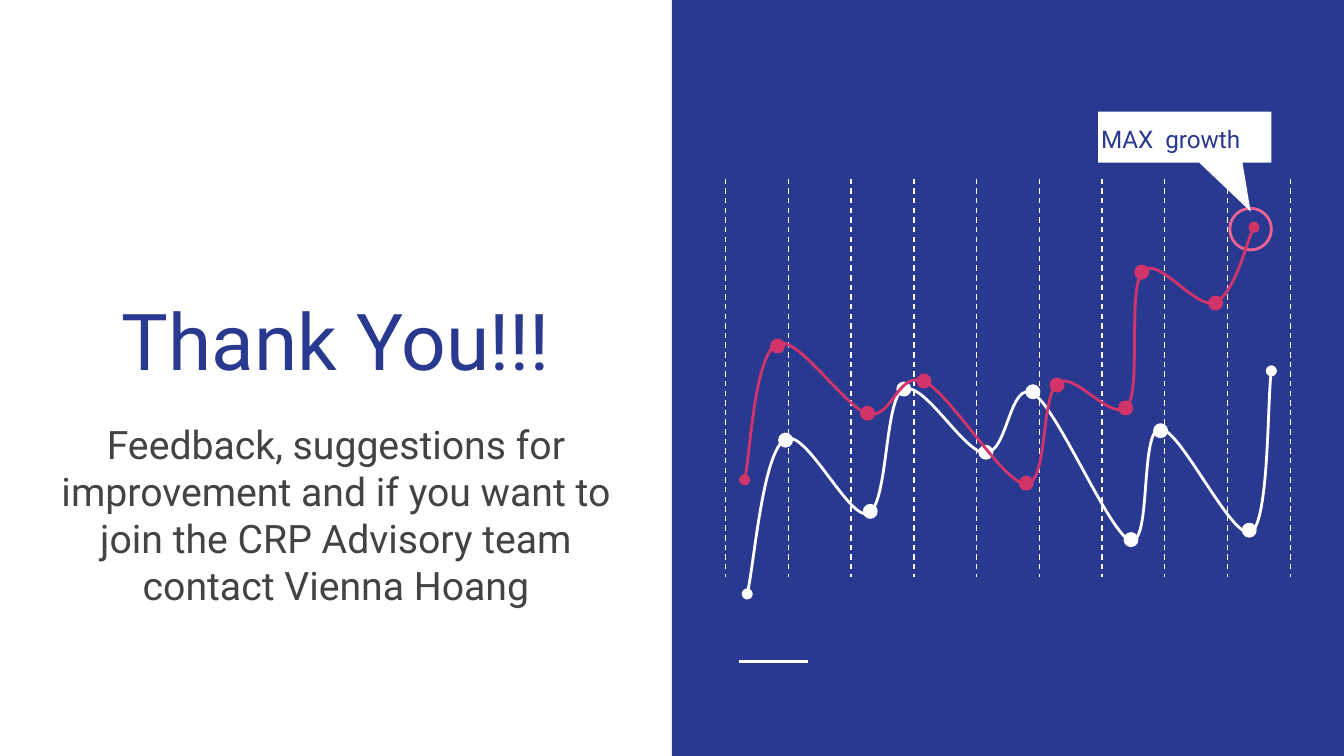
"""Build a closing slide with a thank-you message and a two-line growth graphic."""
from lxml import etree
from pptx import Presentation
from pptx.dml.color import RGBColor
from pptx.enum.dml import MSO_LINE
from pptx.enum.shapes import MSO_CONNECTOR, MSO_SHAPE
from pptx.enum.text import MSO_ANCHOR, PP_ALIGN
from pptx.oxml.ns import qn
from pptx.util import Emu, Pt

PX = 9144
WIDTH = 1000
HEIGHT = WIDTH * 9 / 16
STRAIGHT = MSO_CONNECTOR.STRAIGHT
DASH = MSO_LINE.DASH
RECTANGLE, OVAL = MSO_SHAPE.RECTANGLE, MSO_SHAPE.OVAL
CALLOUT = MSO_SHAPE.ROUNDED_RECTANGULAR_CALLOUT
TOP, MIDDLE, BOTTOM = MSO_ANCHOR.TOP, MSO_ANCHOR.MIDDLE, MSO_ANCHOR.BOTTOM
CENTER = PP_ALIGN.CENTER

FONT = "Roboto"
COLORS = {"white": "FFFFFF", "blue": "2A3990", "grey": "434343",
          "pink": "F06292", "red": "D23369"}

TITLE = ("Thank You!!!", (29, 126, 442, 171), BOTTOM, 42, "blue", 1)
MESSAGE = ("Feedback, suggestions for improvement and if you want to join "
           "the CRP Advisory team contact Vienna Hoang",
           (29, 303, 442, 185), TOP, 21, "grey", 1)
GROWTH_LABEL = ("MAX  growth", (796, 86, 150, 31), MIDDLE, 13, "blue", 1.15)

GRID = {"left": 540, "right": 960, "top": 133, "bottom": 429, "count": 10}
DOT_SIZE = 9

WHITE_START = (556, 442)
WHITE_CURVES = [
    [(561, 422), (568, 337), (584, 327)],
    [(599, 317), (632, 388), (646, 382)],
    [(661, 376), (658, 297), (672, 290)],
    [(687, 282), (717, 337), (733, 337)],
    [(750, 338), (751, 282), (769, 293)],
    [(787, 304), (826, 398), (841, 402)],
    [(857, 407), (848, 321), (863, 319)],
    [(878, 318), (917, 403), (931, 396)],
    [(944, 388), (943, 296), (946, 276)],
]
WHITE_DOTS = [(580, 323), (643, 376), (668, 285), (729, 332),
              (764, 287), (837, 397), (859, 316), (925, 390)]
RED_START = (554, 357)
RED_CURVES = [
    [(558, 340), (562, 264), (578, 256)],
    [(593, 248), (628, 303), (646, 308)],
    [(664, 312), (668, 275), (688, 284)],
    [(707, 293), (747, 360), (763, 360)],
    [(780, 361), (774, 295), (787, 285)],
    [(799, 275), (828, 316), (839, 302)],
    [(849, 289), (839, 215), (850, 202)],
    [(861, 189), (890, 231), (904, 225)],
    [(918, 219), (928, 178), (933, 169)],
]
RED_DOTS = [(574, 253), (641, 303), (683, 279), (759, 355),
            (782, 282), (833, 299), (845, 198), (900, 221)]


def emu(*lengths):
    return [Emu(round(length * PX)) for length in lengths]


def color(name):
    return RGBColor.from_string(COLORS[name])


def style(shape, fill=None, line=None):
    shape.shadow.inherit = False
    if fill:
        shape.fill.solid()
        shape.fill.fore_color.rgb = color(fill)
    else:
        shape.fill.background()
    if line:
        shape.line.color.rgb = color(line)
        shape.line.width = Pt(1.5)
    else:
        shape.line.fill.background()


def add_figure(slide, kind, box, fill=None, line=None):
    shape = slide.shapes.add_shape(kind, *emu(*box))
    style(shape, fill, line)
    return shape


def add_line(slide, start, end, width, dash=None):
    connector = slide.shapes.add_connector(STRAIGHT, *emu(*start, *end))
    connector.line.color.rgb = color("white")
    connector.line.width = Pt(width)
    if dash:
        connector.line.dash_style = dash
    etree.SubElement(connector._element.spPr, qn("a:effectLst"))


def add_text(slide, text, box, anchor, size, color_name, spacing):
    frame = slide.shapes.add_textbox(*emu(*box)).text_frame
    frame.word_wrap = True
    frame.vertical_anchor = anchor
    frame.margin_left = frame.margin_right = Emu(10 * PX)
    frame.margin_top = frame.margin_bottom = Emu(10 * PX)
    paragraph = frame.paragraphs[0]
    paragraph.text = text
    paragraph.alignment = CENTER
    paragraph.line_spacing = spacing
    paragraph.font.name = FONT
    paragraph.font.size = Pt(size)
    paragraph.font.color.rgb = color(color_name)


def add_curve(slide, start, curves, dots, color_name):
    builder = slide.shapes.build_freeform(*start, scale=PX)
    builder.add_line_segments([point for curve in curves for point in curve], close=False)
    shape = builder.convert_to_shape()
    style(shape, line=color_name)

    outline = next(shape._element.iter(qn("a:path")))
    segments = outline.findall(qn("a:lnTo"))
    for first in range(0, len(segments), 3):
        bezier = etree.SubElement(outline, qn("a:cubicBezTo"))
        for segment in segments[first:first + 3]:
            bezier.append(segment[0])
            outline.remove(segment)
    for tag in ("a:headEnd", "a:tailEnd"):
        etree.SubElement(shape.line._get_or_add_ln(), qn(tag), type="oval")

    for left, top in dots:
        add_figure(slide, OVAL, (left, top, DOT_SIZE, DOT_SIZE), color_name, color_name)


def main():
    presentation = Presentation()
    presentation.slide_width, presentation.slide_height = emu(WIDTH, HEIGHT)
    slide = presentation.slides.add_slide(presentation.slide_layouts[6])

    add_figure(slide, RECTANGLE, (WIDTH / 2, 0, WIDTH / 2, HEIGHT), "blue")
    add_line(slide, (550, 492), (601, 492), 1.5)
    gap = (GRID["right"] - GRID["left"]) / (GRID["count"] - 1)
    for column in range(GRID["count"]):
        x = GRID["left"] + column * gap
        add_line(slide, (x, GRID["top"]), (x, GRID["bottom"]), 0.75, DASH)

    add_figure(slide, OVAL, (915, 155, 31, 31), line="pink")
    add_text(slide, *TITLE)
    add_text(slide, *MESSAGE)
    add_curve(slide, WHITE_START, WHITE_CURVES, WHITE_DOTS, "white")
    callout = add_figure(slide, CALLOUT, (817, 83, 129, 38), "white")
    for index, value in enumerate((0.38, 1.46, 0)):
        callout.adjustments[index] = value
    add_curve(slide, RED_START, RED_CURVES, RED_DOTS, "red")
    add_text(slide, *GROWTH_LABEL)

    presentation.save("out.pptx")


if __name__ == "__main__":
    main()
